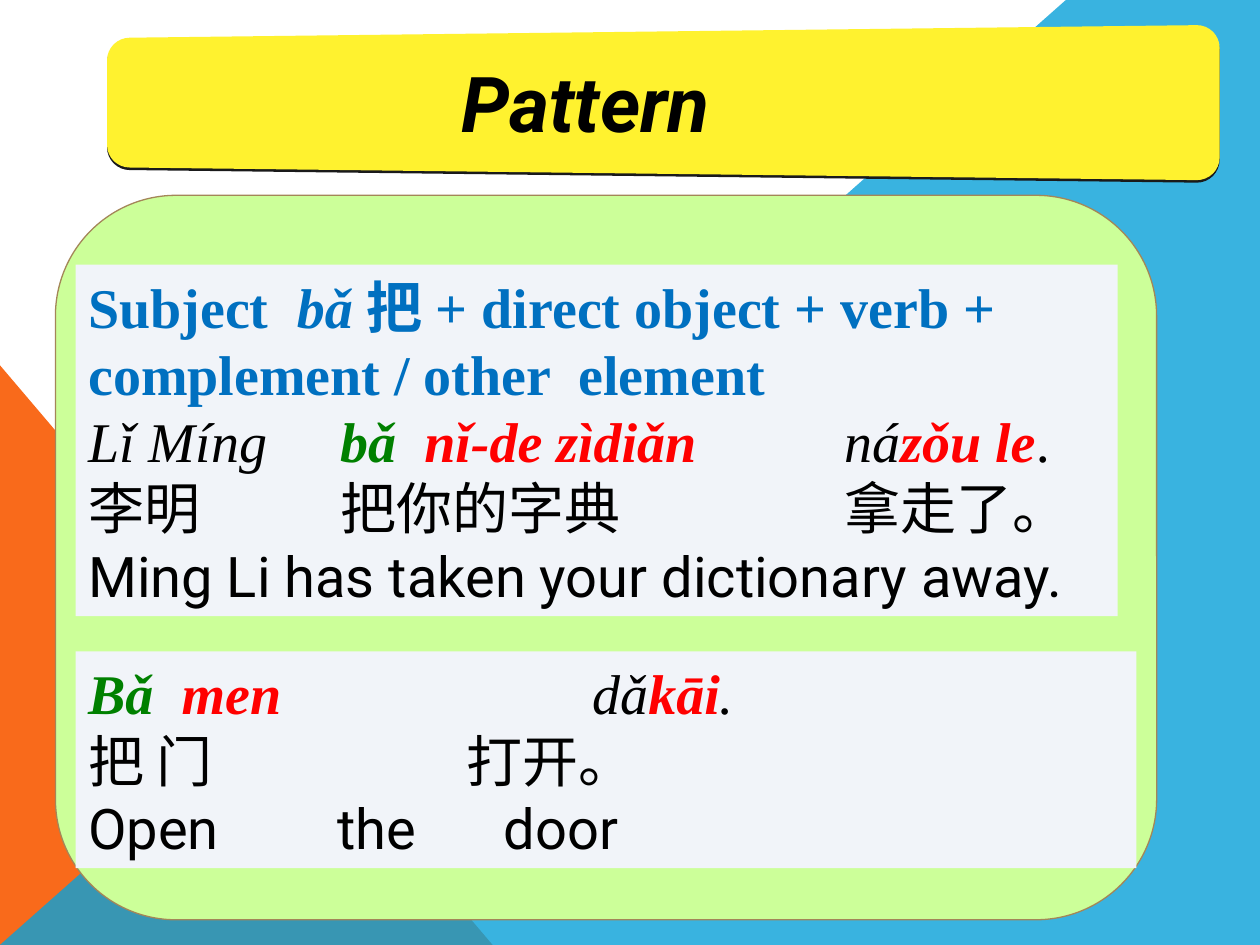
from math import cos, pi, sin

from lxml.etree import SubElement
from pptx import Presentation
from pptx.dml.color import RGBColor
from pptx.enum.shapes import MSO_SHAPE
from pptx.enum.text import MSO_ANCHOR, MSO_AUTO_SIZE, PP_ALIGN
from pptx.oxml.ns import qn
from pptx.util import Inches, Pt

LATIN, HAN, SANS = "Times New Roman", "Noto Sans CJK SC", "Roboto"

# Run styles
STYLES = {
    "title": dict(name=SANS, size=44, color="000000", bold=True, italic=True),
    "rule": dict(name=LATIN, size=32, color="0070C0", bold=True, italic=False),
    "rule pinyin": dict(name=LATIN, size=32, color="0070C0", bold=True, italic=True),
    "rule han": dict(name=HAN, size=32, color="0070C0", bold=True, italic=False),
    "marker": dict(name=LATIN, size=32, color="008000", bold=True, italic=True),
    "focus": dict(name=LATIN, size=32, color="FF0000", bold=True, italic=True),
    "pinyin": dict(name=LATIN, size=32, color="000000", bold=False, italic=True),
    "stop": dict(name=LATIN, size=32, color="000000", bold=False, italic=False),
    "han": dict(name=HAN, size=32, color="000000", bold=False, italic=False),
    "english": dict(name=SANS, size=32, color="000000", bold=False, italic=False),
}

# Each panel: position and paragraphs; each paragraph: tab interval and runs
PANELS = [
    ((0.6, 2.1, 8.27, 2.79), [
        (1, [("Subject  ", "rule"), ("bǎ ", "rule pinyin"), ("把 ", "rule han"),
             ("+ direct object + verb + complement / other  element", "rule")]),
        (2, [("Lǐ Míng \t", "pinyin"), ("bǎ  ", "marker"),
             ("nǐ-de zìdiǎn \t", "focus"), ("ná", "pinyin"),
             ("zǒu le", "focus"), (".", "stop")]),
        (2, [("李明\t把你的字典\t拿走了。", "han")]),
        (1, [("Ming Li has taken your dictionary away.", "english")]),
    ]),
    ((0.6, 5.17, 8.42, 1.72), [
        (4, [("Bǎ  ", "marker"), ("men \t", "focus"), ("dǎ", "pinyin"),
             ("kāi", "focus"), (".", "pinyin")]),
        (3, [("把 门\t打开。", "han")]),
        (0.66, [("Open\t\tthe\t\tdoor", "english")]),
    ]),
]

# Banner corners (x, y), clockwise from top left, seen in perspective
BANNER = [(0.85, 0.3), (9.68, 0.2), (9.68, 1.43), (0.85, 1.33)]


def paint(shape, fill, line=None, alpha=None):
    shape.shadow.inherit = False
    shape.fill.solid()
    shape.fill.fore_color.rgb = RGBColor.from_string(fill)
    if alpha is not None:
        color = shape.fill._xPr.find(".//" + qn("a:srgbClr"))
        SubElement(color, qn("a:alpha"), val=str(alpha * 1000))
    if line:
        shape.line.color.rgb = RGBColor.from_string(line)
        shape.line.width = Pt(0.75)
    else:
        shape.line.fill.background()


def add_preset(kind, place, fill, line=None):
    shape = slide.shapes.add_shape(kind, *map(Inches, place))
    paint(shape, fill, line)
    return shape


def add_outline(points, fill, alpha=None):
    points = [(Inches(x), Inches(y)) for x, y in points]
    builder = slide.shapes.build_freeform(*points[0])
    builder.add_line_segments(points[1:], close=True)
    shape = builder.convert_to_shape()
    paint(shape, fill, alpha=alpha)
    return shape


def rounded(corners, radius=0.18, steps=8):
    """Replace each corner with a quarter circle."""
    middle_x = sum(x for x, _ in corners) / 4
    middle_y = sum(y for _, y in corners) / 4
    points = []
    for index, (x, y) in enumerate(corners):
        center_x = x + (radius if x < middle_x else -radius)
        center_y = y + (radius if y < middle_y else -radius)
        for step in range(steps + 1):
            angle = pi + (index + step / steps) * pi / 2
            points.append((center_x + radius * cos(angle),
                           center_y + radius * sin(angle)))
    return points


def add_span(para, text, style):
    span = para.add_run()
    span.text = text
    for key, value in STYLES[style].items():
        if key == "color":
            span.font.color.rgb = RGBColor.from_string(value)
        else:
            setattr(span.font, key, Pt(value) if key == "size" else value)
    SubElement(span.font._element, qn("a:ea"), typeface=STYLES[style]["name"])


def set_place(box, place):
    box.left, box.top, box.width, box.height = map(Inches, place)
    slide.shapes._spTree.append(box._element)  # bring to front
    frame = box.text_frame
    frame.word_wrap = True
    frame.auto_size = MSO_AUTO_SIZE.NONE
    frame.vertical_anchor = MSO_ANCHOR.MIDDLE
    return frame


def fill_panel(box, place, paragraphs):
    frame = set_place(box, place)
    box.fill.solid()
    box.fill.fore_color.rgb = RGBColor.from_string("F1F4F9")
    for index, (interval, spans) in enumerate(paragraphs):
        para = frame.add_paragraph() if index else frame.paragraphs[0]
        para.line_spacing = Pt(38.4)
        para.space_before = para.space_after = Pt(0)
        properties = para._p.get_or_add_pPr()
        layout = {"marL": 0, "indent": 0, "defTabSz": Inches(interval)}
        for key, value in layout.items():
            properties.set(key, str(value))
        SubElement(properties, qn("a:buNone"))
        for text, style in spans:
            add_span(para, text, style)


deck = Presentation()
deck.slide_width, deck.slide_height = Inches(10), Inches(7.5)
slide = deck.slides.add_slide(deck.slide_layouts[3])
title, *bodies = [box for box in slide.placeholders
                  if box.placeholder_format.idx < 3]

# Background
add_preset(MSO_SHAPE.RIGHT_TRIANGLE, (0, 2.9, 3.91, 4.6), "F96A1B")
add_outline([(0, 7.5), (8.46, 0), (10, 0), (10, 7.5)], "08A1D9", alpha=80)

# Banner with a dark lower edge, and its title
outline = rounded(BANNER)
add_outline([(x, y + 0.02) for x, y in outline], "1A1A1A")
add_outline(outline, "FFF22F")
para = set_place(title, (0.86, 0.26, 7.58, 1.1)).paragraphs[0]
para.alignment = PP_ALIGN.CENTER
add_span(para, "Pattern", "title")

# Card and text panels
add_preset(MSO_SHAPE.ROUNDED_RECTANGLE, (0.44, 1.55, 8.74, 5.75), "CCFF99", "A48658")
for box, (place, paragraphs) in zip(bodies, PANELS):
    fill_panel(box, place, paragraphs)

deck.save("out.pptx")
